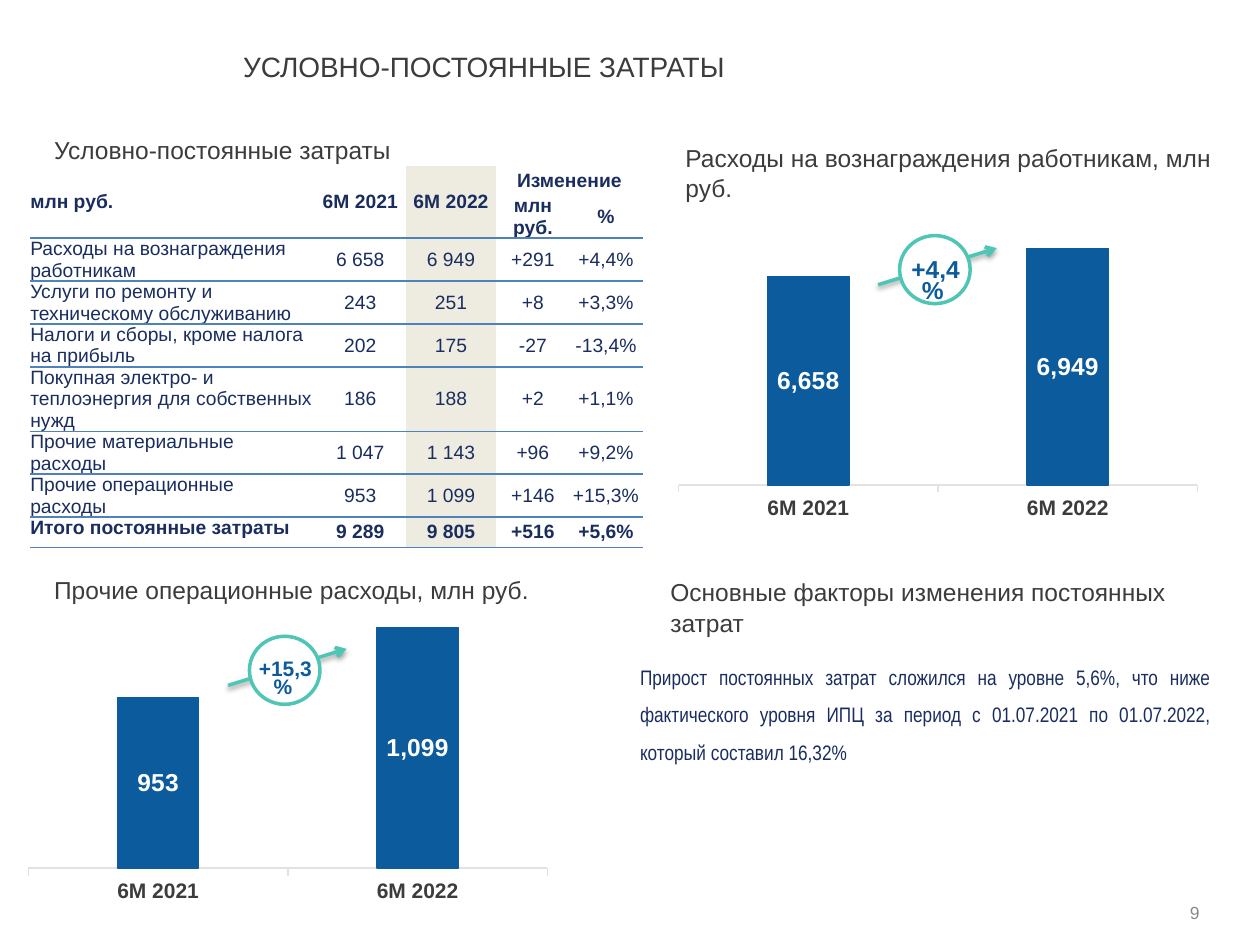
from lxml import etree
from pptx import Presentation
from pptx.chart.data import CategoryChartData
from pptx.dml.color import RGBColor
from pptx.enum.chart import XL_CHART_TYPE, XL_LABEL_POSITION, XL_TICK_MARK
from pptx.enum.dml import MSO_PATTERN
from pptx.enum.shapes import MSO_CONNECTOR, MSO_SHAPE
from pptx.enum.text import MSO_ANCHOR, MSO_AUTO_SIZE, PP_ALIGN
from pptx.oxml import parse_xml
from pptx.oxml.ns import nsdecls, qn
from pptx.util import Inches, Pt

LEFT, CENTER, RIGHT, JUSTIFY = PP_ALIGN.LEFT, PP_ALIGN.CENTER, PP_ALIGN.RIGHT, PP_ALIGN.JUSTIFY
TOP, MIDDLE = MSO_ANCHOR.TOP, MSO_ANCHOR.MIDDLE
COLORS = {
    "text": "3C3C3C", "navy": "1A2D5F", "bar": "0C5B9D", "teal": "4FC5B5",
    "rule": "4F81BD", "beige": "EEECE1", "axis": "E2E2E2", "grey": "8A8A8A",
    "white": "FFFFFF",
}
RGB = {name: RGBColor.from_string(value) for name, value in COLORS.items()}


def style_font(font, size, color, bold=False, name="Arial"):
    font.size, font.bold, font.name = Pt(size), bold, name
    font.color.rgb = RGB[color]


def write(holder, text, size, color, align=LEFT, anchor=TOP, spacing=1.0, name="Arial"):
    frame = holder.text_frame
    frame.text = text
    frame.word_wrap = True
    frame.auto_size = MSO_AUTO_SIZE.NONE
    frame.vertical_anchor = anchor
    frame.margin_left = frame.margin_right = frame.margin_top = frame.margin_bottom = 0
    paragraph = frame.paragraphs[0]
    paragraph.alignment, paragraph.line_spacing = align, spacing
    paragraph.space_before = Pt(0)
    style_font(paragraph.runs[0].font, size, color, name=name)


prs = Presentation()
prs.slide_width, prs.slide_height = Inches(10), Inches(7.5)
slide = prs.slides.add_slide(prs.slide_layouts[1])
shapes = slide.shapes

# Title
title = shapes.title
title.left, title.top, title.width, title.height = map(Inches, (1.93, 0.42, 7.6, 0.47))
write(title, "УСЛОВНО-ПОСТОЯННЫЕ ЗАТРАТЫ", 16, "text", spacing=0.9)

# Section headings: the first sits in the body placeholder
pay_heading = slide.placeholders[1]
pay_heading.left, pay_heading.top, pay_heading.width, pay_heading.height = map(
    Inches, (5.44, 1.12, 4.4, 0.59))
write(pay_heading, "Расходы на вознаграждения работникам, млн руб.", 14, "text", spacing=1.05)
pay_format = pay_heading.text_frame.paragraphs[0]._p.get_or_add_pPr()
pay_format.set("marL", "0")
pay_format.set("indent", "0")
etree.SubElement(pay_format, qn("a:buNone"))

for heading, left, top in (
    ("Условно-постоянные затраты", 0.43, 1.06),
    ("Основные факторы изменения постоянных затрат", 5.32, 4.57),
    ("Прочие операционные расходы, млн руб.", 0.43, 4.55),
):
    box = shapes.add_textbox(Inches(left), Inches(top), Inches(4.27), Inches(0.59))
    write(box, heading, 14, "text", spacing=1.05)

# Cost table
ROWS = [
    ("млн руб.", "6М 2021", "6М 2022", "Изменение", ""),
    ("", "", "", "млн руб.", "%"),
    ("Расходы на вознаграждения работникам", "6 658", "6 949", "+291", "+4,4%"),
    ("Услуги по ремонту и техническому обслуживанию", "243", "251", "+8", "+3,3%"),
    ("Налоги и сборы, кроме налога на прибыль", "202", "175", "-27", "-13,4%"),
    ("Покупная электро- и теплоэнергия для собственных нужд", "186", "188", "+2", "+1,1%"),
    ("Прочие материальные расходы", "1 047", "1 143", "+96", "+9,2%"),
    ("Прочие операционные расходы", "953", "1 099", "+146", "+15,3%"),
    ("Итого постоянные затраты", "9 289", "9 805", "+516", "+5,6%"),
]
HEADER_ROWS, TOTAL_ROW, CURRENT_COLUMN = 2, len(ROWS) - 1, 2
costs = shapes.add_table(len(ROWS), 5, Inches(0.24), Inches(1.32), Inches(4.86), Inches(2.15)).table
costs.first_row = costs.horz_banding = False
costs._tbl.tblPr.find(qn("a:tableStyleId")).text = "{2D5ABB26-0587-4C30-8999-92F81FD0307C}"
for column, width in zip(costs.columns, (2.26, 0.72, 0.72, 0.58, 0.58)):
    column.width = Inches(width)
for row in costs.rows:
    row.height = Inches(0.24)
costs.rows[0].height = Inches(0.23)

for r, values in enumerate(ROWS):
    for c, value in enumerate(values):
        cell = costs.cell(r, c)
        cell.margin_left = cell.margin_right = cell.margin_top = cell.margin_bottom = 0
        cell.vertical_anchor = TOP if c == 0 and r >= 5 else MIDDLE
        if c == CURRENT_COLUMN:
            cell.fill.solid()
            cell.fill.fore_color.rgb = RGB["beige"]
        else:
            cell.fill.background()
        if r > 0 or c < 3:
            cell._tc.get_or_add_tcPr().insert(0, parse_xml(
                f'<a:lnB {nsdecls("a")} w="12700"><a:solidFill>'
                f'<a:srgbClr val="{COLORS["rule"]}"/></a:solidFill></a:lnB>'))
        if value:
            cell.text = value
            paragraph = cell.text_frame.paragraphs[0]
            paragraph.alignment = CENTER if c else LEFT
            style_font(paragraph.runs[0].font, 11, "navy", r < HEADER_ROWS or r == TOTAL_ROW)
for c in range(3):
    costs.cell(0, c).merge(costs.cell(1, c))
costs.cell(0, 3).merge(costs.cell(0, 4))

# Column charts, each with a growth marker placed relative to the chart
CHARTS = [
    (5.3, 1.51, (6658, 6949), 4500, 7000, "+4,4%", 14, 11),
    (0.14, 4.55, (953, 1099), 600, 1100, "+15,3%", 12, 10.5),
]
for left, top, values, low, high, growth, growth_size, space_size in CHARTS:
    data = CategoryChartData(number_format="#,##0")
    data.categories = ["6М 2021", "6М 2022"]
    data.add_series("Series 1", values)
    chart = shapes.add_chart(XL_CHART_TYPE.COLUMN_CLUSTERED, Inches(left), Inches(top),
                             Inches(4.29), Inches(2.66), data).chart
    chart.has_legend = chart.has_title = False
    style_font(chart.font, 10, "text")

    value_axis, category_axis = chart.value_axis, chart.category_axis
    value_axis.minimum_scale, value_axis.maximum_scale = low, high
    value_axis.has_major_gridlines = value_axis.visible = False
    category_axis.major_tick_mark = XL_TICK_MARK.OUTSIDE
    category_axis.format.line.color.rgb = RGB["axis"]
    category_axis.format.line.width = Pt(0.75)
    style_font(category_axis.tick_labels.font, 12, "text", True)

    plot = chart.plots[0]
    plot.gap_width, plot.vary_by_categories = 219, False
    bars = plot.series[0].format
    bars.fill.solid()
    bars.fill.fore_color.rgb = bars.line.color.rgb = RGB["bar"]
    bars.line.width = Pt(0.75)
    plot.has_data_labels = True
    labels = plot.data_labels
    labels.show_value, labels.position = True, XL_LABEL_POSITION.CENTER
    labels.number_format, labels.number_format_is_linked = "#,##0", False
    style_font(labels.font, 14, "white", True)

    # Fixed inner plot area
    plot_area = chart._chartSpace.chart.plotArea
    for old_layout in plot_area.findall(qn("c:layout")):
        plot_area.remove(old_layout)
    plot_area.insert(0, parse_xml(
        f'<c:layout {nsdecls("c")}><c:manualLayout><c:layoutTarget val="inner"/>'
        '<c:xMode val="edge"/><c:yMode val="edge"/><c:x val="0.02"/><c:y val="0.16"/>'
        '<c:w val="0.96"/><c:h val="0.72"/></c:manualLayout></c:layout>'))

    # Growth marker: arrow, ring and percentage
    marker = shapes.add_group_shape().shapes
    mark_top = top + (0.36 if top < 3 else 0.5)
    arrow = marker.add_connector(MSO_CONNECTOR.STRAIGHT, Inches(left + 1.67), Inches(mark_top + 0.39),
                                 Inches(left + 2.61), Inches(mark_top + 0.1))
    arrow.line.color.rgb, arrow.line.width = RGB["teal"], Pt(2)
    etree.SubElement(arrow.line._get_or_add_ln(), qn("a:tailEnd"), type="arrow")
    arrow._element.spPr.append(parse_xml(
        f'<a:effectLst {nsdecls("a")}><a:outerShdw blurRad="40000" dist="20000" dir="5400000" '
        'rotWithShape="0"><a:srgbClr val="000000"><a:alpha val="38000"/></a:srgbClr>'
        '</a:outerShdw></a:effectLst>'))

    ring = marker.add_shape(MSO_SHAPE.OVAL, Inches(left + 1.84), Inches(mark_top),
                            Inches(0.56), Inches(0.54))
    ring.shadow.inherit = False
    ring.fill.patterned()
    ring.fill.pattern = MSO_PATTERN.LIGHT_UPWARD_DIAGONAL
    ring.fill.fore_color.rgb = ring.fill.back_color.rgb = RGB["white"]
    ring.line.color.rgb, ring.line.width = RGB["teal"], Pt(2)

    percent = marker.add_textbox(Inches(left + 1.77), Inches(mark_top + 0.16),
                                 Inches(0.71), Inches(0.28))
    write(percent, growth, growth_size, "bar", CENTER, spacing=0.7)
    frame = percent.text_frame
    frame.auto_size = MSO_AUTO_SIZE.SHAPE_TO_FIT_TEXT
    frame.margin_left = frame.margin_right = Inches(0.1)
    frame.margin_top = frame.margin_bottom = Inches(0.05)
    frame.paragraphs[0].runs[0].font.bold = True
    space = frame.paragraphs[0].add_run()
    space.text = " "
    style_font(space.font, space_size, "bar")

# Main factors
factors = shapes.add_textbox(Inches(5.08), Inches(5.17), Inches(4.53), Inches(1.05))
write(factors, "Прирост постоянных затрат сложился на уровне 5,6%, что ниже фактического уровня ИПЦ "
      "за период с 01.07.2021 по 01.07.2022, который составил 16,32%",
      12, "navy", JUSTIFY, spacing=1.5, name="Arial Narrow")

# Page number
page_number = shapes.add_textbox(Inches(9.09), Inches(7.15), Inches(0.43), Inches(0.18))
write(page_number, "9", 10, "grey", RIGHT, MIDDLE)

prs.save("out.pptx")
